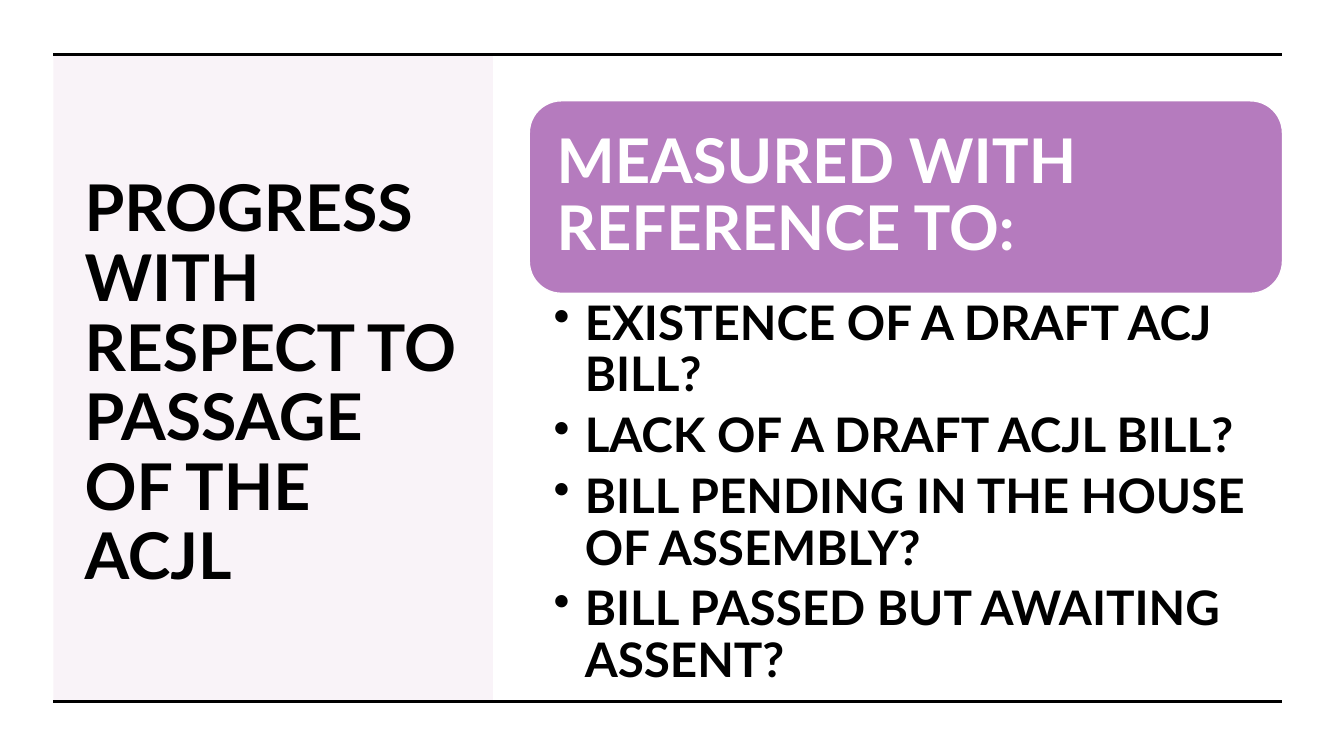
import pptx
import pptx.util
import pptx.dml.color
import pptx.enum.shapes
import pptx.enum.text
import pptx.oxml.ns
import lxml.etree

Inches = pptx.util.Inches
Pt = pptx.util.Pt
Kind = pptx.enum.shapes.MSO_SHAPE
Anchor = pptx.enum.text.MSO_ANCHOR

TITLE = "PROGRESS WITH RESPECT TO PASSAGE OF THE ACJL"
HEAD = "MEASURED WITH REFERENCE TO:"
ITEMS = [
    "EXISTENCE OF A DRAFT ACJ BILL?",
    "LACK OF A DRAFT ACJL BILL?",
    "BILL PENDING IN THE HOUSE OF ASSEMBLY?",
    "BILL PASSED BUT AWAITING ASSENT?",
]
COLORS = {"ink": "000000", "white": "FFFFFF", "panel": "CA93BB", "head": "B57BBE"}
FONT = "Lato"
LEFT, RIGHT, TOP, BASE = 0.53, 12.72, 0.54, 6.96
COL, WIDE = 5.25, 7.47
HEAD_TOP, HEAD_TALL, PAD = 1, 1.91, 0.09
INDENT = 0.31


def color(name):
    return pptx.dml.color.RGBColor.from_string(COLORS[name])


def child(node, tag, **attrs):
    part = lxml.etree.SubElement(node, pptx.oxml.ns.qn(tag))
    for key, val in attrs.items():
        part.set(key, val)
    return part


def add_text(slide, lines, box, size, ink="ink", inset=(0.1, 0.05, 0.1, 0.05),
             anchor=Anchor.MIDDLE, after=0, bullet=False):
    frame = slide.shapes.add_textbox(*map(Inches, box)).text_frame
    frame.word_wrap = True
    frame.vertical_anchor = anchor
    (frame.margin_left, frame.margin_top,
     frame.margin_right, frame.margin_bottom) = map(Inches, inset)
    for i, line in enumerate(lines):
        para = frame.paragraphs[0] if i == 0 else frame.add_paragraph()
        para.line_spacing = 0.9
        para.space_after = Pt(after)
        if bullet:
            props = para._p.get_or_add_pPr()
            props.set("marL", str(Inches(INDENT)))
            props.set("indent", str(-Inches(INDENT)))
            child(props, "a:buChar", char="•")
        run = para.add_run()
        run.text = line
        run.font.name = FONT
        run.font.size = Pt(size)
        run.font.bold = True
        run.font.color.rgb = color(ink)


def add_block(slide, kind, box, fill):
    block = slide.shapes.add_shape(kind, *map(Inches, box))
    block.shadow.inherit = False
    block.fill.solid()
    block.fill.fore_color.rgb = color(fill)
    block.line.fill.background()
    return block


def add_rule(slide, y):
    rule = slide.shapes.add_connector(
        pptx.enum.shapes.MSO_CONNECTOR.STRAIGHT,
        Inches(LEFT), Inches(y), Inches(RIGHT), Inches(y))
    rule.line.color.rgb = color("ink")
    rule.line.width = Pt(2.25)
    child(rule._element.spPr, "a:effectLst")


def main():
    deck = pptx.Presentation()
    deck.slide_width, deck.slide_height = Inches(13.33), Inches(7.5)
    slide = deck.slides.add_slide(deck.slide_layouts[6])

    panel = add_block(slide, Kind.RECTANGLE, (LEFT, TOP, 4.36, BASE - TOP), "panel")
    tint = panel._element.spPr.find(".//" + pptx.oxml.ns.qn("a:srgbClr"))
    child(tint, "a:alpha", val="10000")
    add_text(slide, [TITLE], (0.74, 1.07, 3.89, 5.5), 46)
    for y in (TOP, BASE):
        add_rule(slide, y)

    head = add_block(slide, Kind.ROUNDED_RECTANGLE,
                     (COL, HEAD_TOP, WIDE, HEAD_TALL), "head")
    head.line.color.rgb = color("white")
    head.line.width = Pt(1)
    add_text(slide, [HEAD],
             (COL + PAD, HEAD_TOP + PAD, WIDE - 2 * PAD, HEAD_TALL - 2 * PAD),
             44, ink="white", inset=(0.18,) * 4)
    add_text(slide, ITEMS, (COL, HEAD_TOP + HEAD_TALL, WIDE, 3.59), 34,
             inset=(0.24, 0.06, 0.34, 0.06), anchor=Anchor.TOP,
             after=6.8, bullet=True)
    deck.save("out.pptx")


if __name__ == "__main__":
    main()
